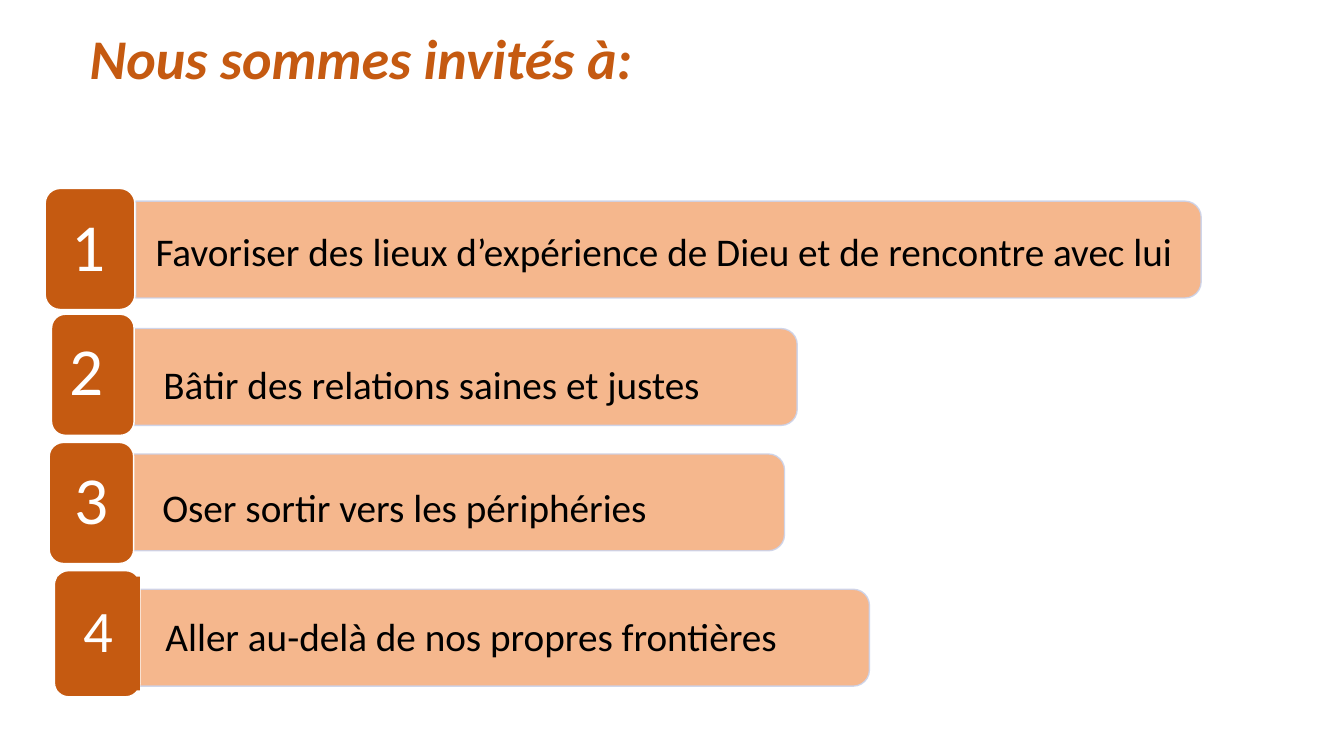
from lxml.etree import SubElement
from pptx import Presentation
from pptx.dml.color import RGBColor
from pptx.enum.shapes import MSO_SHAPE
from pptx.enum.text import MSO_ANCHOR, PP_ALIGN
from pptx.oxml.ns import qn
from pptx.util import Cm, Pt

COLORS = {"rust": "C55A11", "peach": "F4B081", "edge": "CCD3EA",
          "white": "FFFFFF", "black": "000000"}
BAR_H = 2.44

# Each row: number, size, label, then left, top, width (and height)
# of its bar, label, badge and number.
ROWS = [
    ("1", 48, "Favoriser des lieux d’expérience de Dieu et de rencontre avec lui",
     (3.42, 5.07, 26.85), (3.23, 5.31, 27.51, 2.18),
     (1.14, 4.75, 2.26, 3.05), (1.12, 4.9, 2.21, 2.79)),
    ("2", 48, "Bâtir des relations saines et justes",
     (3.38, 8.28, 16.71), (3.43, 8.66, 16.61, 2.18),
     (1.3, 7.92, 2.08, 3.05), (1.24, 8, 1.88, 2.84)),
    ("3", 48, "Oser sortir vers les périphéries",
     (3.29, 11.44, 16.48), (3.4, 11.76, 16.38, 2.18),
     (1.24, 11.15, 2.13, 3.05), (1.19, 11.28, 2.21, 2.79)),
    ("4", 42, "Aller au-delà de nos propres frontières",
     (3.49, 14.85, 18.42), (3.48, 15, 18.31, 2.18),
     (1.37, 14.38, 2.16, 3.18), (1.45, 14.53, 2.08, 2.87)),
]

deck = Presentation()
deck.slide_width, deck.slide_height = Cm(33.87), Cm(19.05)
slide = deck.slides.add_slide(deck.slide_layouts[6])


def add_block(kind, area, fill, line):
    """Add a filled, outlined shape without shadow."""
    block = slide.shapes.add_shape(kind, *map(Cm, area))
    block.shadow.inherit = False
    block.fill.solid()
    block.fill.fore_color.rgb = RGBColor.from_string(COLORS[fill])
    block.line.color.rgb = RGBColor.from_string(COLORS[line])
    block.line.width = Pt(1)
    return block


def add_text(area, text, size, color, pad, align=PP_ALIGN.LEFT):
    """Add a one-line text box; pad holds its side and top insets."""
    box = slide.shapes.add_textbox(*map(Cm, area))
    frame = box.text_frame
    frame.word_wrap = True
    frame.vertical_anchor = MSO_ANCHOR.MIDDLE
    frame.margin_left = frame.margin_right = Cm(pad[0])
    frame.margin_top = frame.margin_bottom = Cm(pad[1])
    para = frame.paragraphs[0]
    para.alignment = align
    para.line_spacing = 0.9
    run = para.add_run()
    run.text = text
    run.font.name = "Calibri"
    run.font.size = Pt(size)
    run.font.color.rgb = RGBColor.from_string(COLORS[color])
    return box


title = add_text((2.01, 0.48, 29.21, 2.13), "Nous sommes invités à:",
                 40, "rust", (0.25, 0.13))
font = title.text_frame.paragraphs[0].runs[0].font
font.bold = font.italic = True

for digit, size, label, bar_at, label_at, badge_at, digit_at in ROWS:
    # The bar is an upright shape turned a quarter about its centre.
    left, top, width = bar_at
    shift = (width - BAR_H) / 2
    bar = add_block(MSO_SHAPE.ROUND_2_SAME_RECTANGLE,
                    (left + shift, top - shift, BAR_H, width), "peach", "edge")
    bar.rotation = 90
    for tint in bar._element.spPr.iter(qn("a:srgbClr")):
        SubElement(tint, qn("a:alpha"), val="90000")
    add_text(label_at, label, 28, "black", (0.69, 0.36))

    add_block(MSO_SHAPE.ROUNDED_RECTANGLE, badge_at, "rust", "white")
    mark = add_text(digit_at, digit, size, "white", (0.5, 0.25), PP_ALIGN.CENTER)

# The last number has a square plate that shows past its badge.
mark.fill.solid()
mark.fill.fore_color.rgb = RGBColor.from_string(COLORS["rust"])

deck.save("out.pptx")
